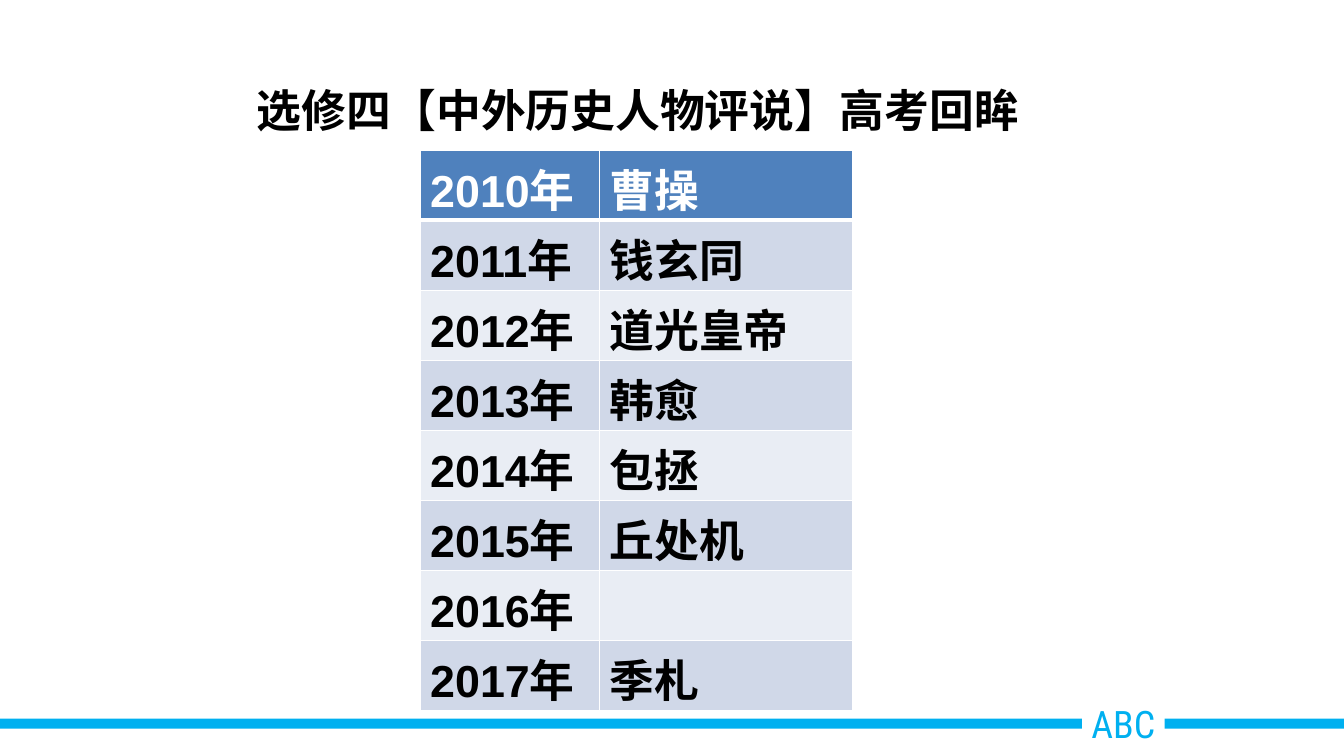
from lxml import etree
from pptx import Presentation
from pptx import util as u
from pptx.dml.color import RGBColor
from pptx.enum import shapes, text
from pptx.oxml import ns

COLORS = {
    "accent": "00B0F0",
    "header": "4F81BD",
    "odd_row": "D0D8E8",
    "even_row": "E9EDF4",
    "white": "FFFFFF",
    "black": "000000",
}
PEOPLE = [
    ("2010年", "曹操"),
    ("2011年", "钱玄同"),
    ("2012年", "道光皇帝"),
    ("2013年", "韩愈"),
    ("2014年", "包拯"),
    ("2015年", "丘处机"),
    ("2016年", ""),
    ("2017年", "季札"),
]
COLUMN_WIDTHS = [1.78, 2.51]
ROW_HEIGHT = 0.695


def fill(target, color):
    target.fill.solid()
    target.fill.fore_color.rgb = RGBColor.from_string(COLORS[color])


def add_text(paragraph, words, font="Arial", size=32, color="black", bold=True):
    run = paragraph.add_run()
    run.text = words
    run.font.name = font
    run.font.size = u.Pt(size)
    run.font.bold = bold
    run.font.color.rgb = RGBColor.from_string(COLORS[color])


presentation = Presentation()
presentation.slide_width = u.Inches(13.34)
presentation.slide_height = u.Inches(7.5)
slide = presentation.slides.add_slide(presentation.slide_layouts[5])

# Footer band with its label
band = slide.shapes.add_shape(
    shapes.MSO_SHAPE.RECTANGLE, 0, u.Inches(7.13), presentation.slide_width, u.Inches(0.1)
)
band.shadow.inherit = False
fill(band, "accent")
band.line.fill.background()

label = slide.shapes.add_textbox(u.Inches(10.74), u.Inches(6.9), u.Inches(0.82), u.Inches(0.57))
fill(label, "white")
label.text_frame.word_wrap = False
label.text_frame.margin_left = label.text_frame.margin_right = 0
label_paragraph = label.text_frame.paragraphs[0]
label_paragraph.alignment = text.PP_ALIGN.CENTER
add_text(label_paragraph, "ABC", font="Roboto Condensed", size=27, color="accent", bold=False)

# Title
title = slide.shapes.title
title.left, title.top = u.Inches(2.45), u.Inches(0.77)
title.width, title.height = u.Inches(9.77), u.Inches(0.64)
title.text_frame.auto_size = text.MSO_AUTO_SIZE.NONE
title.text_frame.vertical_anchor = text.MSO_ANCHOR.TOP
title_paragraph = title.text_frame.paragraphs[0]
title_paragraph.alignment = text.PP_ALIGN.LEFT
add_text(title_paragraph, "选修四【")
add_text(title_paragraph, "中外历史人物评说", font="Times New Roman")
add_text(title_paragraph, "】高考回眸")

# Table of years and people
table = slide.shapes.add_table(
    len(PEOPLE), len(COLUMN_WIDTHS), u.Inches(4.17), u.Inches(1.49),
    u.Inches(sum(COLUMN_WIDTHS)), u.Inches(ROW_HEIGHT * len(PEOPLE)),
).table
for column, width in zip(table.columns, COLUMN_WIDTHS):
    column.width = u.Inches(width)
for row_index, entry in enumerate(PEOPLE):
    row_fill = "header" if row_index == 0 else "odd_row" if row_index % 2 else "even_row"
    for column_index, words in enumerate(entry):
        cell = table.cell(row_index, column_index)
        # Borders come before the fill in the cell's properties
        properties = cell._tc.get_or_add_tcPr()
        for side in ("lnL", "lnR", "lnT", "lnB"):
            below_header = (row_index, side) in [(0, "lnB"), (1, "lnT")]
            border = etree.SubElement(
                properties, ns.qn(f"a:{side}"), w=str(u.Pt(3 if below_header else 1))
            )
            border_fill = etree.SubElement(border, ns.qn("a:solidFill"))
            etree.SubElement(border_fill, ns.qn("a:srgbClr"), val=COLORS["white"])
        fill(cell, row_fill)
        if words:
            add_text(
                cell.text_frame.paragraphs[0], words,
                font="Times New Roman" if words == "丘处机" else "Arial",
                color="white" if row_index == 0 else "black",
            )

presentation.save("out.pptx")
